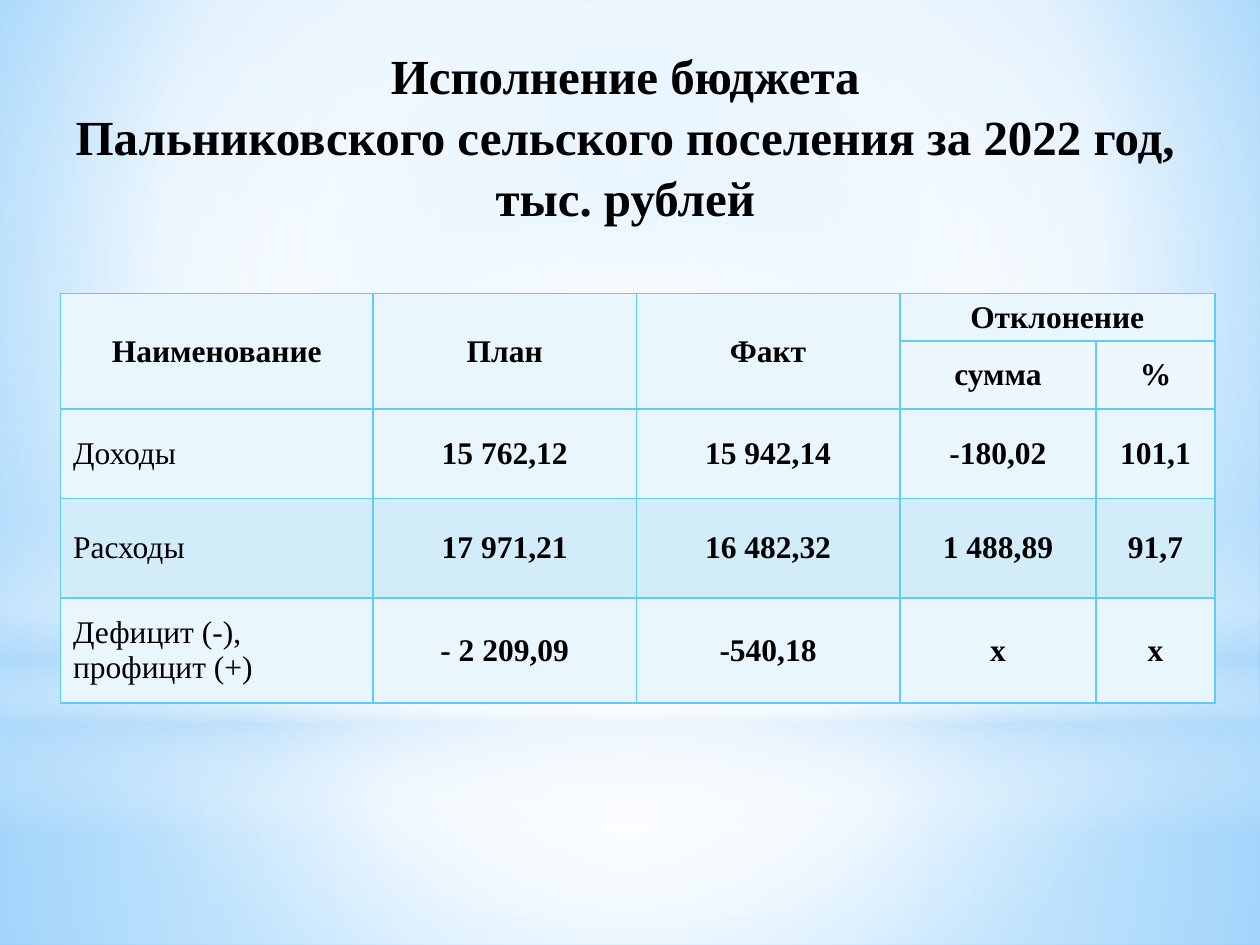
from lxml import etree
from pptx import Presentation
from pptx.dml.color import RGBColor
from pptx.enum.shapes import MSO_SHAPE
from pptx.enum.text import MSO_ANCHOR, PP_ALIGN
from pptx.oxml.ns import qn
from pptx.util import Cm, Pt

RECTANGLE, OVAL = MSO_SHAPE.RECTANGLE, MSO_SHAPE.OVAL
LEFT, CENTER = PP_ALIGN.LEFT, PP_ALIGN.CENTER
MIDDLE = MSO_ANCHOR.MIDDLE

BLACK = RGBColor(0x00, 0x00, 0x00)
WHITE = RGBColor(0xFF, 0xFF, 0xFF)
SKY = RGBColor(0x9E, 0xD5, 0xFF)
AZURE = RGBColor(0x5B, 0xB9, 0xFF)
MIST = RGBColor(0xB4, 0xDC, 0xFA)
BORDER = RGBColor(0x5E, 0xCC, 0xF3)
LIGHT = RGBColor(0xEA, 0xF6, 0xFD)
SUBHEAD = RGBColor(0xED, 0xF7, 0xFD)
BAND = RGBColor(0xD2, 0xEC, 0xFA)


def write_text(frame, text, size=18, bold=True, align=CENTER, spacing=1.0):
    frame.word_wrap = True
    frame.text = text
    for para in frame.paragraphs:
        para.alignment = align
        para.line_spacing = spacing
        for span in para.runs:
            span.font.name = "Times New Roman"
            span.font.size = Pt(size)
            span.font.bold = bold
            span.font.color.rgb = BLACK


def set_gradient(fill, element, stops, focus=None):
    """Stops are (position, colour, opacity) in percent; without a focus the gradient runs down."""
    fill.gradient()
    gradient = element.xpath(".//a:gradFill")[0]
    for child in list(gradient):
        gradient.remove(child)
    stop_list = etree.SubElement(gradient, qn("a:gsLst"))
    for position, color, opacity in stops:
        stop = etree.SubElement(stop_list, qn("a:gs"), pos=str(position * 1000))
        tint = etree.SubElement(stop, qn("a:srgbClr"), val=str(color))
        if opacity < 100:
            etree.SubElement(tint, qn("a:alpha"), val=str(opacity * 1000))
    if focus is None:
        etree.SubElement(gradient, qn("a:lin"), ang="5400000", scaled="0")
    else:
        circle = etree.SubElement(gradient, qn("a:path"), path="circle")
        edges = {side: str(value * 1000) for side, value in zip("ltrb", focus)}
        etree.SubElement(circle, qn("a:fillToRect"), **edges)


deck = Presentation()
deck.slide_width, deck.slide_height = Cm(25.4), Cm(19.05)
page = deck.slides.add_slide(deck.slide_layouts[6])

# Background
set_gradient(page.background.fill, page.element,
             [(0, SKY, 100), (60, WHITE, 100), (100, AZURE, 100)], (20, 10, 20, 60))

# Full-width layers of light: shape, top, height, stops, focus
middle = (50, 50, 50, 50)
layers = [
    (RECTANGLE, 14.17, 4.88, [(0, WHITE, 91), (37, WHITE, 76), (100, MIST, 79)], middle),
    (RECTANGLE, 0, 14.17, [(0, WHITE, 89), (48, WHITE, 62), (100, MIST, 79)], middle),
    (RECTANGLE, 10.46, 6.35, [(0, WHITE, 0), (29, WHITE, 30), (45, MIST, 40),
                              (55, WHITE, 26), (65, MIST, 60), (100, WHITE, 0)], None),
    (OVAL, 4.45, 14.17, [(0, WHITE, 100), (56, WHITE, 0)], middle),
]
for kind, top, height, stops, focus in layers:
    layer = page.shapes.add_shape(kind, 0, Cm(top), deck.slide_width, Cm(height))
    layer.shadow.inherit = False
    layer.line.fill.background()
    set_gradient(layer.fill, layer.element, stops, focus)

# Budget table
rows = [
    ("Наименование", "План", "Факт", "Отклонение", ""),
    ("", "", "", "сумма", "%"),
    ("Доходы", "15 762,12", "15 942,14", "-180,02", "101,1"),
    ("Расходы", "17 971,21", "16 482,32", "1 488,89", "91,7"),
    ("Дефицит (-), профицит (+)", "- 2 209,09", "-540,18", "х", "х"),
]
row_fills = [LIGHT, SUBHEAD, LIGHT, BAND, LIGHT]
row_heights = [0.95, 1.37, 1.8, 2.01, 2.11]
column_widths = [6.3, 5.31, 5.31, 3.96, 2.39]

table = page.shapes.add_table(len(rows), len(column_widths), Cm(1.22), Cm(5.92),
                              Cm(sum(column_widths)), Cm(sum(row_heights))).table
table.first_row = table.horz_banding = False
for column, width in zip(table.columns, column_widths):
    column.width = Cm(width)
for row, height in zip(table.rows, row_heights):
    row.height = Cm(height)

for r, values in enumerate(rows):
    for c, value in enumerate(values):
        cell = table.cell(r, c)
        cell.vertical_anchor = MIDDLE
        label = c == 0 and r > 1
        if value:
            write_text(cell.text_frame, value, bold=not label, align=LEFT if label else CENTER)
        # Borders come before the fill in the cell properties
        properties = cell._tc.get_or_add_tcPr()
        for side in ("a:lnL", "a:lnR", "a:lnT", "a:lnB"):
            line = etree.SubElement(properties, qn(side), w=str(Pt(1)))
            solid = etree.SubElement(line, qn("a:solidFill"))
            etree.SubElement(solid, qn("a:srgbClr"), val=str(BORDER))
        cell.fill.solid()
        cell.fill.fore_color.rgb = row_fills[r]

# Header cells that span rows or columns
for c in range(3):
    table.cell(0, c).merge(table.cell(1, c))
table.cell(0, 3).merge(table.cell(0, 4))

# Title
title = page.shapes.add_textbox(Cm(0.3), Cm(0.84), Cm(24.61), Cm(3.76))
title.text_frame.vertical_anchor = MIDDLE
write_text(title.text_frame,
           "Исполнение бюджета\vПальниковского сельского поселения за 2022 год,\nтыс. рублей",
           size=28, spacing=1.04)

deck.save("out.pptx")
